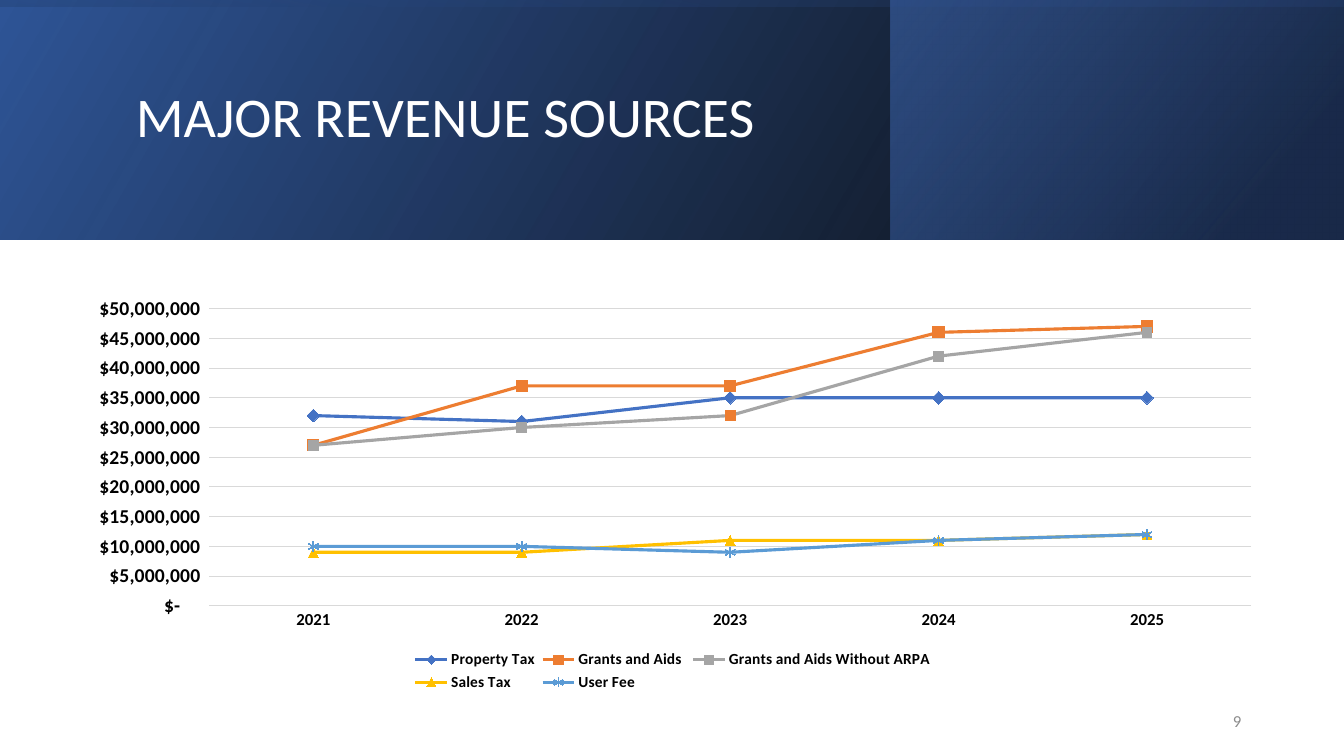
import dataclasses
import typing

import pptx
import pptx.chart.data
import pptx.dml.color
import pptx.enum.chart
import pptx.enum.dml
import pptx.enum.shapes
import pptx.enum.text
import pptx.oxml
import pptx.oxml.ns
import pptx.util

Inches = pptx.util.Inches
Pt = pptx.util.Pt
Mark = pptx.enum.chart.XL_MARKER_STYLE
Align = pptx.enum.text.PP_ALIGN
Box = tuple[float, float, float, float]


@dataclasses.dataclass(frozen=True)
class Theme:
    font: str = "Calibri"
    white: str = "FFFFFF"
    black: str = "000000"
    grid: str = "D9D9D9"
    muted: str = "8C8C8C"
    deep: str = "2F5597"
    navy: str = "203864"
    blue: str = "4472C4"
    orange: str = "ED7D31"
    gray: str = "A5A5A5"
    gold: str = "FFC000"
    sky: str = "5B9BD5"
    title: int = 40
    chart: int = 10
    value: int = 14
    year: int = 12
    legend: int = 11
    page: int = 12


THEME = Theme()


class Stop(typing.NamedTuple):
    place: int
    color: str
    alpha: int


@dataclasses.dataclass(frozen=True)
class Panel:
    box: Box
    angle: int
    stops: tuple[Stop, Stop]
    turn: int = 0


@dataclasses.dataclass(frozen=True)
class Label:
    text: str
    box: Box
    size: int
    color: str
    align: Align
    spacing: float = 1.0


@dataclasses.dataclass(frozen=True)
class Source:
    name: str
    color: str
    mark: Mark
    size: int
    millions: tuple[int, ...]


PANELS = (
    Panel((0, 0, 13.33, 2.38), 330,
          (Stop(0, THEME.black, 96), Stop(100, THEME.deep, 100))),
    Panel((8.83, 0, 4.5, 2.38), 320,
          (Stop(19, THEME.navy, 68), Stop(100, THEME.blue, 48))),
    Panel((5.48, -5.48, 2.37, 13.33), 350,
          (Stop(23, THEME.deep, 16), Stop(99, THEME.black, 45)), 270),
)
LABELS = (
    Label("MAJOR REVENUE SOURCES", (1.25, 0.32, 10.63, 1.72),
          THEME.title, THEME.white, Align.LEFT, 0.9),
    Label("9", (9.41, 6.95, 3, 0.4), THEME.page, THEME.muted, Align.RIGHT),
)
YEARS = ("2021", "2022", "2023", "2024", "2025")
SOURCES = (
    Source("Property Tax", THEME.blue, Mark.DIAMOND, 9, (32, 31, 35, 35, 35)),
    Source("Grants and Aids ", THEME.orange, Mark.SQUARE, 8, (27, 37, 37, 46, 47)),
    Source("Grants and Aids Without ARPA", THEME.gray, Mark.SQUARE, 7,
           (27, 30, 32, 42, 46)),
    Source("Sales Tax ", THEME.gold, Mark.TRIANGLE, 7, (9, 9, 11, 11, 12)),
    Source("User Fee ", THEME.sky, Mark.STAR, 7, (10, 10, 9, 11, 12)),
)
MONEY = r'_("$"* #,##0_);_("$"* \(#,##0\);_("$"* "-"??_);_(@_)'


def assign(target: typing.Any, values: dict[str, typing.Any]) -> None:
    for name, value in values.items():
        setattr(target, name, value)


def shade(hue: str) -> pptx.dml.color.RGBColor:
    return pptx.dml.color.RGBColor.from_string(hue)


def style(font: typing.Any, size: int, color: str, bold: bool = False) -> None:
    assign(font, {"name": THEME.font, "size": Pt(size), "bold": bold})
    font.color.rgb = shade(color)


def stroke(line: typing.Any, color: str, width: float) -> None:
    line.color.rgb = shade(color)
    line.width = Pt(width)


def draw_panel(slide: typing.Any, panel: Panel) -> None:
    shape = slide.shapes.add_shape(
        pptx.enum.shapes.MSO_SHAPE.RECTANGLE, *map(Inches, panel.box))
    shape.shadow.inherit = False
    shape.rotation = panel.turn
    shape.line.fill.background()
    shape._element.spPr.xfrm.set("flipH", "1")
    shape.fill.gradient()
    shape.fill.gradient_angle = 360 - panel.angle
    for stop, want in zip(shape.fill.gradient_stops, panel.stops):
        stop.position = want.place / 100
        stop.color.rgb = shade(want.color)
        tint = stop._gs.find(pptx.oxml.ns.qn("a:srgbClr"))
        tint.append(pptx.oxml.parse_xml(
            f'<a:alpha {pptx.oxml.ns.nsdecls("a")} val="{want.alpha * 1000}"/>'))


def draw_label(slide: typing.Any, label: Label) -> None:
    frame = slide.shapes.add_textbox(*map(Inches, label.box)).text_frame
    assign(frame, {"word_wrap": True,
                   "vertical_anchor": pptx.enum.text.MSO_ANCHOR.MIDDLE})
    para = frame.paragraphs[0]
    assign(para, {"alignment": label.align, "line_spacing": label.spacing})
    run = para.add_run()
    run.text = label.text
    style(run.font, label.size, label.color)


def place(part: typing.Any, index: int, box: Box, inner: bool = False) -> None:
    """Fix a chart part at left, top, width, height as shares of the chart."""
    for old in part.findall(pptx.oxml.ns.qn("c:layout")):
        part.remove(old)
    target = '<c:layoutTarget val="inner"/>' if inner else ""
    modes = "".join(f'<c:{side}Mode val="edge"/>' for side in "xy")
    sizes = "".join(f'<c:{side} val="{share}"/>' for side, share in zip("xywh", box))
    part.insert(index, pptx.oxml.parse_xml(
        f'<c:layout {pptx.oxml.ns.nsdecls("c")}><c:manualLayout>'
        f'{target}{modes}{sizes}</c:manualLayout></c:layout>'))


def fill_mark(mark: typing.Any, source: Source, color: str) -> None:
    assign(mark, {"style": source.mark, "size": source.size})
    if source.mark == Mark.STAR:
        mark.format.fill.background()
    else:
        mark.format.fill.solid()
        mark.format.fill.fore_color.rgb = shade(color)
    stroke(mark.format.line, color, 0.75)


def draw_chart(slide: typing.Any) -> None:
    data = pptx.chart.data.CategoryChartData()
    data.categories = YEARS
    for source in SOURCES:
        data.add_series(source.name, [m * 1_000_000 for m in source.millions])
    chart = slide.shapes.add_chart(
        pptx.enum.chart.XL_CHART_TYPE.LINE_MARKERS,
        *map(Inches, (0.7, 2.86, 11.95, 4.04)), data).chart
    assign(chart, {"has_title": False, "has_legend": True})
    style(chart.font, THEME.chart, THEME.black)
    assign(chart.legend, {"position": pptx.enum.chart.XL_LEGEND_POSITION.BOTTOM,
                          "include_in_layout": False})
    style(chart.legend.font, THEME.legend, THEME.black, True)

    none = pptx.enum.chart.XL_TICK_MARK.NONE
    years, money = chart.category_axis, chart.value_axis
    for axis, size in ((years, THEME.year), (money, THEME.value)):
        assign(axis, {"major_tick_mark": none, "minor_tick_mark": none})
        style(axis.tick_labels.font, size, THEME.black, True)
    stroke(years.format.line, THEME.grid, 0.75)
    assign(money, {"minimum_scale": 0, "maximum_scale": 50_000_000,
                   "major_unit": 5_000_000, "has_major_gridlines": True})
    money.format.line.fill.background()
    stroke(money.major_gridlines.format.line, THEME.grid, 0.75)
    assign(money.tick_labels, {"number_format": MONEY,
                               "number_format_is_linked": False})

    plot = chart.plots[0]
    plot.vary_by_categories = False
    for series, source in zip(plot.series, SOURCES):
        series.smooth = False
        stroke(series.format.line, source.color, 2.25)
        fill_mark(series.marker, source, source.color)
    point = plot.series[2].points[YEARS.index("2023")]
    fill_mark(point.marker, SOURCES[2], THEME.orange)
    stroke(point.format.line, THEME.orange, 2.25)

    root = chart._chartSpace
    place(root.xpath("c:chart/c:plotArea")[0], 0, (0.115, 0.05, 0.865, 0.73), True)
    place(root.xpath("c:chart/c:legend")[0], 1, (0.28, 0.88, 0.44, 0.12))


def main() -> None:
    deck = pptx.Presentation()
    assign(deck, {"slide_width": Inches(13.33), "slide_height": Inches(7.5)})
    slide = deck.slides.add_slide(deck.slide_layouts[6])
    for panel in PANELS:
        draw_panel(slide, panel)
    draw_chart(slide)
    for label in LABELS:
        draw_label(slide, label)
    deck.save("out.pptx")


if __name__ == "__main__":
    main()
